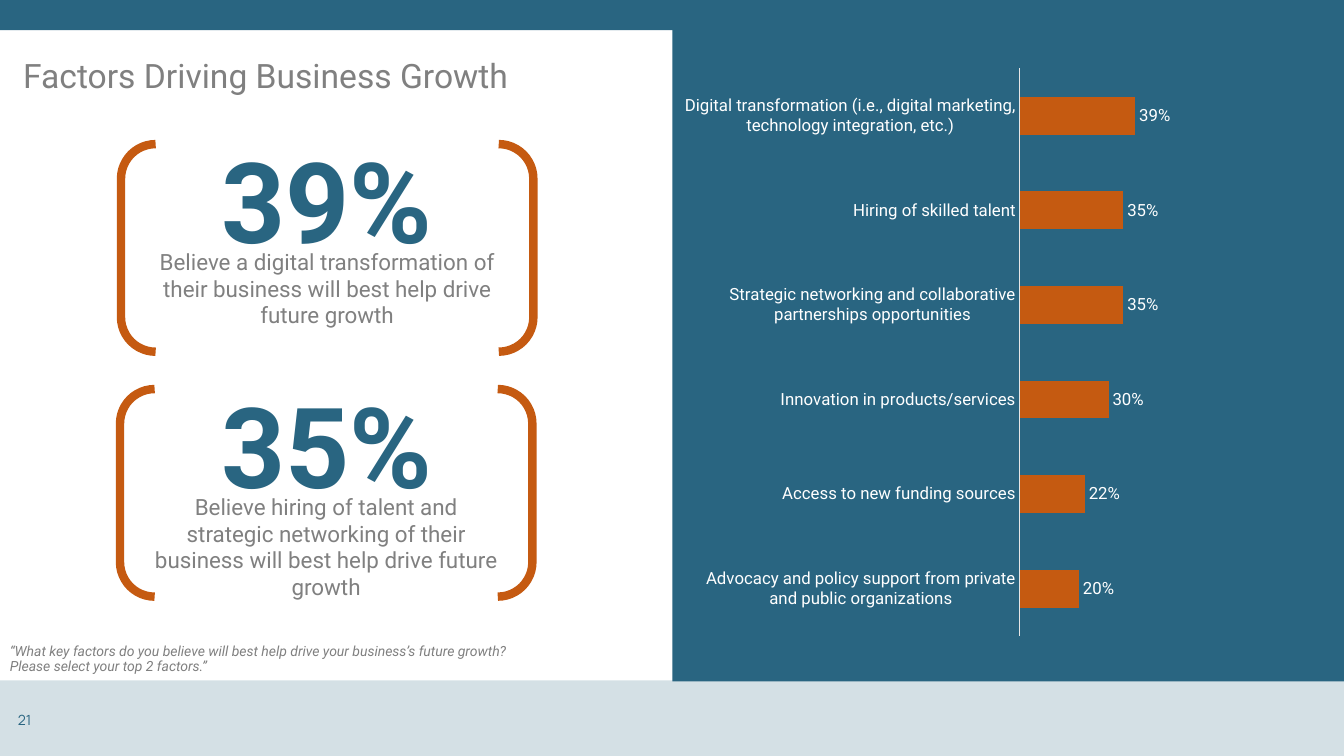
from pptx import Presentation
from pptx.chart.data import CategoryChartData
from pptx.dml.color import RGBColor
from pptx.enum.chart import XL_CHART_TYPE as ChartType
from pptx.enum.chart import XL_LABEL_POSITION as LabelPosition
from pptx.enum.chart import XL_TICK_MARK as TickMark
from pptx.enum.shapes import MSO_SHAPE as Shape
from pptx.enum.text import MSO_ANCHOR as Anchor
from pptx.enum.text import MSO_AUTO_SIZE as AutoSize
from pptx.enum.text import PP_ALIGN as Align
from pptx.oxml import parse_xml
from pptx.oxml.ns import nsdecls
from pptx.util import Pt

EMU_PER_PX = 9144
COLORS = {
    "blue": "296581",
    "orange": "C55A11",
    "gray": "808080",
    "axis": "E7E6E6",
    "white": "FFFFFF",
}
FACTORS = {
    "Advocacy and policy support from private and public organizations": 0.20,
    "Access to new funding sources": 0.22,
    "Innovation in products/services": 0.30,
    "Strategic networking and collaborative partnerships opportunities": 0.35,
    "Hiring of skilled talent": 0.35,
    "Digital transformation (i.e., digital marketing, technology integration, etc.)": 0.39,
}
CALLOUTS = [
    (120, 143, "39%", "Believe a digital transformation of their business will best help drive future growth"),
    (119, 386, "35%", "Believe hiring of talent and strategic networking of their business will best help drive future growth"),
]


def color(name):
    return RGBColor.from_string(COLORS[name])


def px(*lengths):
    return [length * EMU_PER_PX for length in lengths]


def style_font(font, size, ink, face="Roboto", bold=False, italic=False):
    font.name, font.size = face, Pt(size)
    font.bold, font.italic = bold, italic
    font.color.rgb = color(ink)


def write(box, text, align=Align.LEFT, anchor=Anchor.TOP, spacing=1.0, **style):
    frame = box.text_frame
    frame.word_wrap = True
    frame.auto_size = AutoSize.NONE
    frame.vertical_anchor = anchor
    para = frame.paragraphs[0]
    para.alignment, para.line_spacing = align, spacing
    span = para.add_run()
    span.text = text
    style_font(span.font, **style)


class SlideBuilder:
    def __init__(self, deck):
        self.page = deck.slides.add_slide(deck.slide_layouts[5])

    def title(self, text, left, top, width, height, **style):
        box = self.page.shapes.title
        box.left, box.top, box.width, box.height = px(left, top, width, height)
        write(box, text, **style)

    def text(self, text, left, top, width, height, **style):
        box = self.page.shapes.add_textbox(*px(left, top, width, height))
        write(box, text, **style)

    def band(self, left, top, width, height, opacity=100):
        band = self.page.shapes.add_shape(Shape.RECTANGLE, *px(left, top, width, height))
        band.shadow.inherit = False
        band.fill.solid()
        band.fill.fore_color.rgb = color("blue")
        band.line.fill.background()
        if opacity < 100:
            alpha = parse_xml(f'<a:alpha {nsdecls("a")} val="{opacity * 1000}"/>')
            band.element.spPr.find(".//{*}srgbClr").append(alpha)

    def brackets(self, left, top, width, height):
        pair = self.page.shapes.add_shape(Shape.DOUBLE_BRACKET, *px(left, top, width, height))
        pair.shadow.inherit = False
        pair.fill.background()
        pair.line.color.rgb = color("orange")
        pair.line.width = Pt(6)

    def callout(self, left, top, figure, caption):
        self.brackets(left, top, 409, 206)
        self.text(figure, 120, top - 17, 409, 145, align=Align.CENTER, size=80, ink="blue", bold=True)
        self.text(caption, left + 23, top + 98, 363, 91, align=Align.CENTER, size=16, ink="gray")

    def bar_chart(self, values, left, top, width, height):
        data = CategoryChartData(number_format="0%")
        data.categories = list(values)
        data.add_series("Series 1", list(values.values()))
        chart = self.page.shapes.add_chart(
            ChartType.BAR_CLUSTERED, *px(left, top, width, height), data
        ).chart
        chart.has_legend = chart.has_title = False
        style_font(chart.font, 12, "white")

        factor_axis = chart.category_axis
        factor_axis.major_tick_mark = factor_axis.minor_tick_mark = TickMark.NONE
        factor_axis.has_major_gridlines = False
        factor_axis.format.line.color.rgb = color("axis")
        factor_axis.format.line.width = Pt(0.75)
        style_font(factor_axis.tick_labels.font, 12, "white")

        share_axis = chart.value_axis
        share_axis.minimum_scale, share_axis.maximum_scale = 0, 1
        share_axis.has_major_gridlines = False
        share_axis.visible = False

        plot = chart.plots[0]
        plot.gap_width = 150
        plot.vary_by_categories = False
        bars = plot.series[0]
        bars.format.fill.solid()
        bars.format.fill.fore_color.rgb = color("orange")
        labels = bars.data_labels
        labels.show_value = True
        labels.number_format, labels.number_format_is_linked = "0%", False
        labels.position = LabelPosition.OUTSIDE_END
        style_font(labels.font, 12, "white")
        self.place_plot(chart, x=0.5, y=0.03, w=0.44, h=0.95)

    def place_plot(self, chart, **edges):
        area = chart.element.chart.plotArea
        for layout in area.findall("{*}layout"):
            area.remove(layout)
        modes = '<c:xMode val="edge"/><c:yMode val="edge"/>'
        sizes = "".join(f'<c:{edge} val="{share}"/>' for edge, share in edges.items())
        area.insert(0, parse_xml(
            f'<c:layout {nsdecls("c")}><c:manualLayout><c:layoutTarget val="inner"/>'
            f"{modes}{sizes}</c:manualLayout></c:layout>"
        ))


def main():
    deck = Presentation()
    deck.slide_width, deck.slide_height = px(1333, 750)
    builder = SlideBuilder(deck)
    builder.band(0, 675, 1333, 75, opacity=20)
    builder.band(667, 0, 666, 676)
    builder.band(0, 0, 1333, 30)
    builder.text("21", 8, 694, 300, 40, anchor=Anchor.MIDDLE, size=10, ink="blue", face="Manrope")
    builder.title("Factors Driving Business Growth", 13, 54, 640, 64, spacing=0.9, size=24, ink="gray")
    for callout in CALLOUTS:
        builder.callout(*callout)
    builder.text(
        "“What key factors do you believe will best help drive your business’s future growth? "
        "Please select your top 2 factors.”",
        0, 634, 536, 40, spacing=0.9, size=10, ink="gray", italic=True,
    )
    builder.bar_chart(FACTORS, 678, 50, 667, 593)
    deck.save("out.pptx")


if __name__ == "__main__":
    main()
